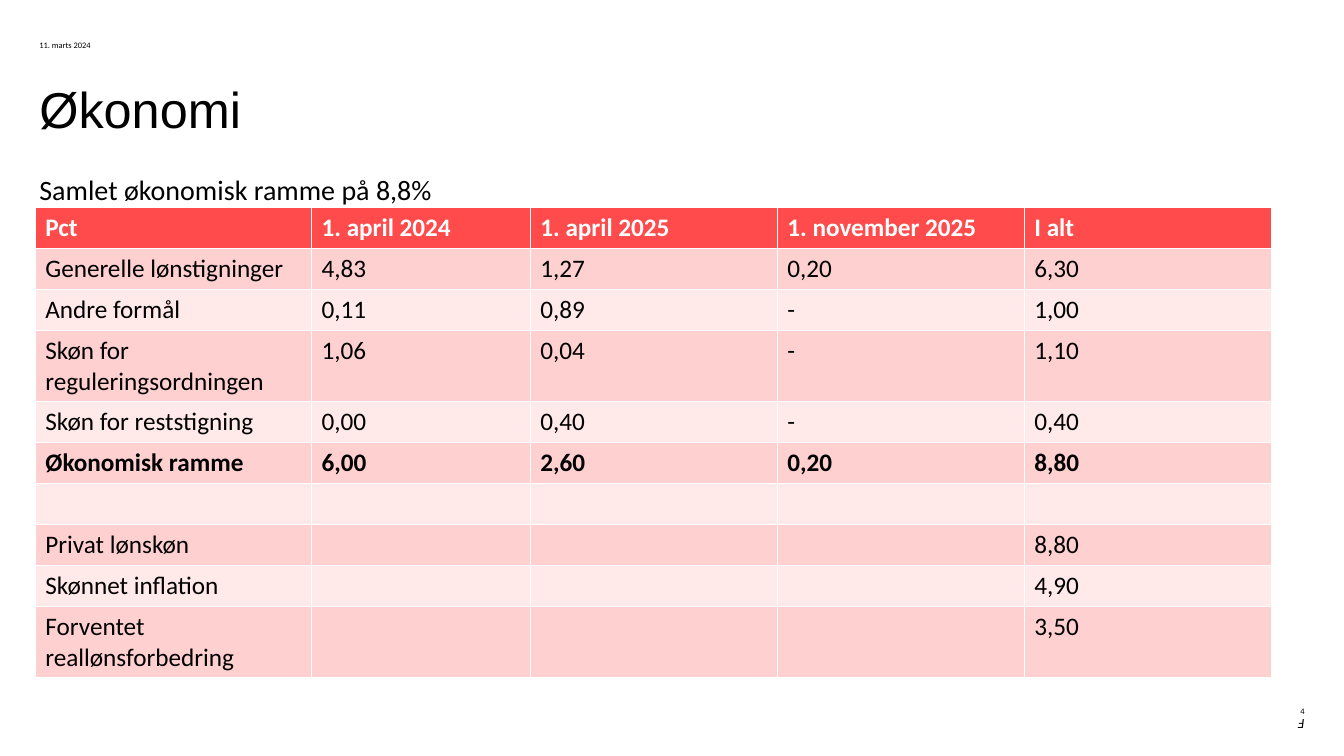
from pptx import Presentation
from pptx.dml.color import RGBColor
from pptx.enum.text import MSO_ANCHOR, MSO_AUTO_SIZE, PP_ALIGN
from pptx.oxml.ns import qn
from pptx.util import Inches, Pt

LEFT, RIGHT = PP_ALIGN.LEFT, PP_ALIGN.RIGHT
TOP, MIDDLE, BOTTOM = MSO_ANCHOR.TOP, MSO_ANCHOR.MIDDLE, MSO_ANCHOR.BOTTOM
BLACK, WHITE = "000000", "FFFFFF"
HEADER_RED, BANDS = "FF4B4B", ("FFE9E9", "FFD0D0")
MARGIN, CONTENT_WIDTH = 0.39, 12.55
COLUMN_WIDTHS = (2.74, 2.17, 2.45, 2.45, 2.45)
ROW_HEIGHT = 0.405
BOLD_ROWS = (0, 5)
ROWS = (
    ("Pct", "1. april 2024", "1. april 2025", "1. november 2025", "I alt"),
    ("Generelle lønstigninger", "4,83", "1,27", "0,20", "6,30"),
    ("Andre formål", "0,11", "0,89", "-", "1,00"),
    ("Skøn for reguleringsordningen", "1,06", "0,04", "-", "1,10"),
    ("Skøn for reststigning", "0,00", "0,40", "-", "0,40"),
    ("Økonomisk ramme", "6,00", "2,60", "0,20", "8,80"),
    ("", "", "", "", ""),
    ("Privat lønskøn", "", "", "", "8,80"),
    ("Skønnet inflation", "", "", "", "4,90"),
    ("Forventet reallønsforbedring", "", "", "", "3,50"),
)


def format_runs(paragraph, size, color=BLACK, name="Calibri", bold=False):
    for run in paragraph.runs:
        run.font.size, run.font.name, run.font.bold = Pt(size), name, bold
        run.font.color.rgb = RGBColor.from_string(color)


def place_text(shape, box, text, size, align=LEFT, anchor=TOP, name="Calibri"):
    """Position a text shape without insets and return its paragraph."""
    shape.left, shape.top, shape.width, shape.height = map(Inches, box)
    frame = shape.text_frame
    frame.text = text
    frame.word_wrap = True
    frame.auto_size = MSO_AUTO_SIZE.NONE
    frame.vertical_anchor = anchor
    frame.margin_left = frame.margin_top = frame.margin_right = frame.margin_bottom = 0
    paragraph = frame.paragraphs[0]
    paragraph.alignment = align
    format_runs(paragraph, size, name=name)
    return paragraph


presentation = Presentation()
presentation.slide_width, presentation.slide_height = Inches(13.33), Inches(7.5)
slide = presentation.slides.add_slide(presentation.slide_layouts[1])

title = place_text(slide.shapes.title, (MARGIN, 0.88, CONTENT_WIDTH, 1.4),
                   "Økonomi", 36, name="Arial")
title.line_spacing = 0.83

# The footer mark is turned upside down, so it reads from the right edge.
footer_mark = slide.placeholders[1]
mark = place_text(footer_mark, (MARGIN, 7.11, CONTENT_WIDTH, 0.3), "F", 10, anchor=BOTTOM)
footer_mark.rotation = 180
properties = mark._p.get_or_add_pPr()
properties.set("marL", "0")
properties.set("indent", "0")
properties.append(properties.makeelement(qn("a:buNone"), {}))
mark.space_before, mark.space_after = Pt(0), Pt(6)
mark.runs[0].font.italic = True

for box, text, size, align, anchor in (
    ((MARGIN, 0.39, 1.08, 0.12), "11. marts 2024", 6, LEFT, MIDDLE),
    ((12.56, 6.99, 0.38, 0.12), "4", 6, RIGHT, MIDDLE),
    ((MARGIN, 1.71, 5.32, 0.34), "Samlet økonomisk ramme på 8,8%", 20, LEFT, TOP),
):
    place_text(slide.shapes.add_textbox(0, 0, 0, 0), box, text, size, align, anchor)

table = slide.shapes.add_table(
    len(ROWS), len(COLUMN_WIDTHS), Inches(0.35), Inches(2.06),
    Inches(sum(COLUMN_WIDTHS)), Inches(ROW_HEIGHT * len(ROWS))).table
for column, width in zip(table.columns, COLUMN_WIDTHS):
    column.width = Inches(width)
for row_index, values in enumerate(ROWS):
    is_header = row_index == 0
    fill_color = HEADER_RED if is_header else BANDS[row_index % 2]
    for column_index, value in enumerate(values):
        cell = table.cell(row_index, column_index)
        cell.fill.solid()
        cell.fill.fore_color.rgb = RGBColor.from_string(fill_color)
        if value:
            cell.text_frame.text = value
            format_runs(cell.text_frame.paragraphs[0], 18,
                        WHITE if is_header else BLACK, bold=row_index in BOLD_ROWS)

presentation.save("out.pptx")
